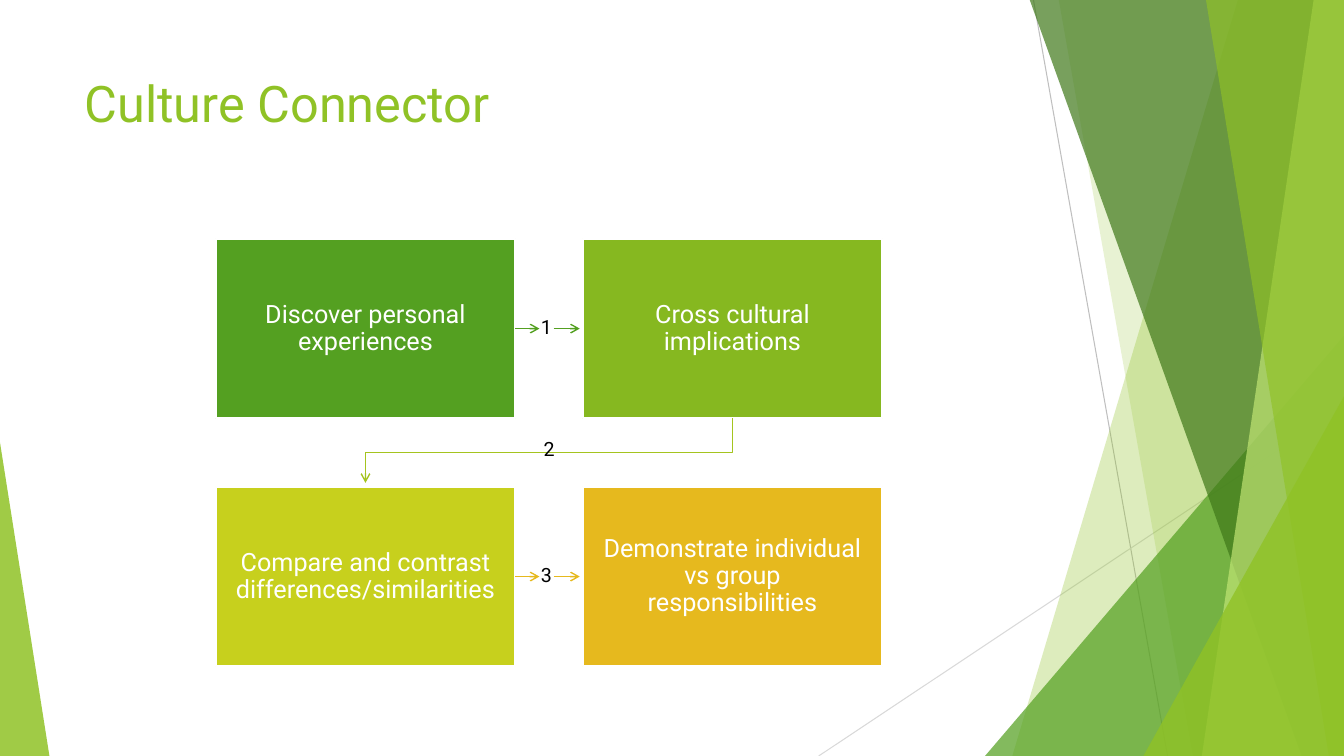
from lxml import etree
from pptx import Presentation
from pptx.dml.color import RGBColor
from pptx.enum import shapes, text
from pptx.oxml.ns import qn
from pptx.util import Inches, Pt

THEME = {
    "font": "Roboto", "title_pt": 36, "box_pt": 18, "number_pt": 14,
    "title": "90C226", "white": "FFFFFF", "black": "000000",
    "green": "54A021", "leaf": "86B820", "lime": "C7D01D", "gold": "E6B91E",
    "elbow": "A5C41F", "dark": "3F7819", "pale": "C0E474",
    "grey": "BFBFBF", "light_grey": "D9D9D9",
}
W, H = 13.33, 7.5

TITLE = "Culture Connector"
STEPS = [
    ("Discover personal experiences", "green"),
    ("Cross cultural implications", "leaf"),
    ("Compare and contrast differences/similarities", "lime"),
    ("Demonstrate individual vs group responsibilities", "gold"),
]
LEFT, TOP, BOX_W, BOX_H = 2.14, 2.37, 2.97, 1.78
PITCH_X, PITCH_Y = 3.64, 2.46
NUMBER_H = 0.21

# Side decoration, from back to front
DECORATION = [
    ("line", (10.25, 0, 11.58, H), "grey", 100),
    ("line", (W, 4.03, 8.12, H), "light_grey", 100),
    ("band", (12.28, 10.04), "title", 30),
    ("band", (10.5, 11.83), "title", 20),
    ("triangle", (9.77, 3.33, 3.56, 4.17, 1), "green", 72),
    ("band", (10.21, 12.91), "dark", 70),
    ("band", (13.03, 11.92), "pale", 70),
    ("band", (11.96, 13.18), "title", 65),
    ("triangle", (11.34, 3.93, 1.99, 3.57, 1), "title", 80),
    ("triangle", (0, 4.39, 0.49, 3.11, 0), "title", 85),
]


def color(name):
    return RGBColor.from_string(THEME[name])


def fill(sp, name, opacity=100):
    sp.shadow.inherit = False
    sp.fill.solid()
    sp.fill.fore_color.rgb = color(name)
    sp.line.fill.background()
    if opacity < 100:
        clr = sp.fill._xPr.find(qn("a:solidFill"))[0]
        etree.SubElement(clr, qn("a:alpha")).set("val", str(opacity * 1000))


def stroke(sp, name, width, arrow=False):
    sp.line.color.rgb = color(name)
    sp.line.width = Pt(width)
    if arrow:
        etree.SubElement(sp.line._get_or_add_ln(), qn("a:tailEnd")).set("type", "arrow")


def add_line(s, x1, y1, x2, y2, name, width, arrow=False):
    line = s.shapes.add_connector(shapes.MSO_CONNECTOR.STRAIGHT,
                                  *map(Inches, (x1, y1, x2, y2)))
    stroke(line, name, width, arrow)
    etree.SubElement(line._element.spPr, qn("a:effectLst"))
    return line


def add_path(s, points, close):
    (x, y), *rest = [(Inches(px), Inches(py)) for px, py in points]
    builder = s.shapes.build_freeform(x, y, scale=1.0)
    builder.add_line_segments(rest, close=close)
    return builder.convert_to_shape()


def write(sp, words, size, name, inset_x, inset_y, align=text.PP_ALIGN.CENTER,
          anchor=text.MSO_ANCHOR.MIDDLE, spacing=0.9):
    tf = sp.text_frame
    tf.text = words
    tf.word_wrap = True
    tf.auto_size = text.MSO_AUTO_SIZE.NONE
    tf.vertical_anchor = anchor
    tf.margin_left = tf.margin_right = Inches(inset_x)
    tf.margin_top = tf.margin_bottom = Inches(inset_y)
    p = tf.paragraphs[0]
    p.alignment, p.line_spacing = align, spacing
    font = p.runs[0].font
    font.name, font.size = THEME["font"], Pt(THEME[size])
    font.color.rgb = color(name)


def add_decoration(s):
    for kind, place, name, opacity in DECORATION:
        if kind == "line":
            add_line(s, *place, name, 0.75)
            continue
        if kind == "band":
            top_x, bottom_x = place
            sp = add_path(s, [(top_x, -0.01), (W, -0.01), (W, H), (bottom_x, H)], True)
        else:
            *box, apex = place
            sp = s.shapes.add_shape(shapes.MSO_SHAPE.ISOSCELES_TRIANGLE, *map(Inches, box))
            sp.adjustments[0] = apex
        fill(sp, name, opacity)


def add_box(s, index):
    words, name = STEPS[index]
    row, col = divmod(index, 2)
    sp = s.shapes.add_shape(
        shapes.MSO_SHAPE.RECTANGLE, Inches(LEFT + col * PITCH_X),
        Inches(TOP + row * PITCH_Y), Inches(BOX_W), Inches(BOX_H))
    fill(sp, name)
    stroke(sp, "white", 1.5)
    write(sp, words, "box_pt", "white", 0.15, 0.15)
    return sp


def add_number(s, number, y, width):
    sp = s.shapes.add_textbox(*map(Inches, (5.35, y, width, NUMBER_H)))
    write(sp, str(number), "number_pt", "black", 0.01, 0)


def add_row_arrows(s, number, row, box, name):
    """Two short arrows with the step number between them."""
    y = TOP + row * PITCH_Y + BOX_H / 2
    add_line(s, LEFT + BOX_W, y, 5.35, y, name, 1, True).begin_connect(box, 3)
    add_line(s, 5.49, y, 5.75, y, name, 1, True)
    add_number(s, number, y - NUMBER_H / 2, 0.14)


def add_elbow(s):
    start_x, end_x = LEFT + PITCH_X + BOX_W / 2, LEFT + BOX_W / 2
    sp = add_path(s, [(start_x, TOP + BOX_H), (start_x, 4.49), (end_x, 4.49),
                      (end_x, 4.79)], False)
    sp.shadow.inherit = False
    sp.fill.background()
    stroke(sp, "elbow", 1, True)
    add_number(s, 2, 4.36, 0.19)


def main():
    prs = Presentation()
    prs.slide_width, prs.slide_height = Inches(W), Inches(H)
    s = prs.slides.add_slide(prs.slide_layouts[5])
    add_decoration(s)

    title = s.shapes.title
    title.left, title.top, title.width, title.height = map(Inches, (0.74, 0.67, 9.4, 1.44))
    write(title, TITLE, "title_pt", "title", 0.1, 0.05,
          text.PP_ALIGN.LEFT, text.MSO_ANCHOR.TOP, 1.0)

    boxes = [add_box(s, i) for i in range(len(STEPS))]
    add_row_arrows(s, 1, 0, boxes[0], "green")
    add_elbow(s)
    add_row_arrows(s, 3, 1, boxes[2], "gold")
    prs.save("out.pptx")


if __name__ == "__main__":
    main()
